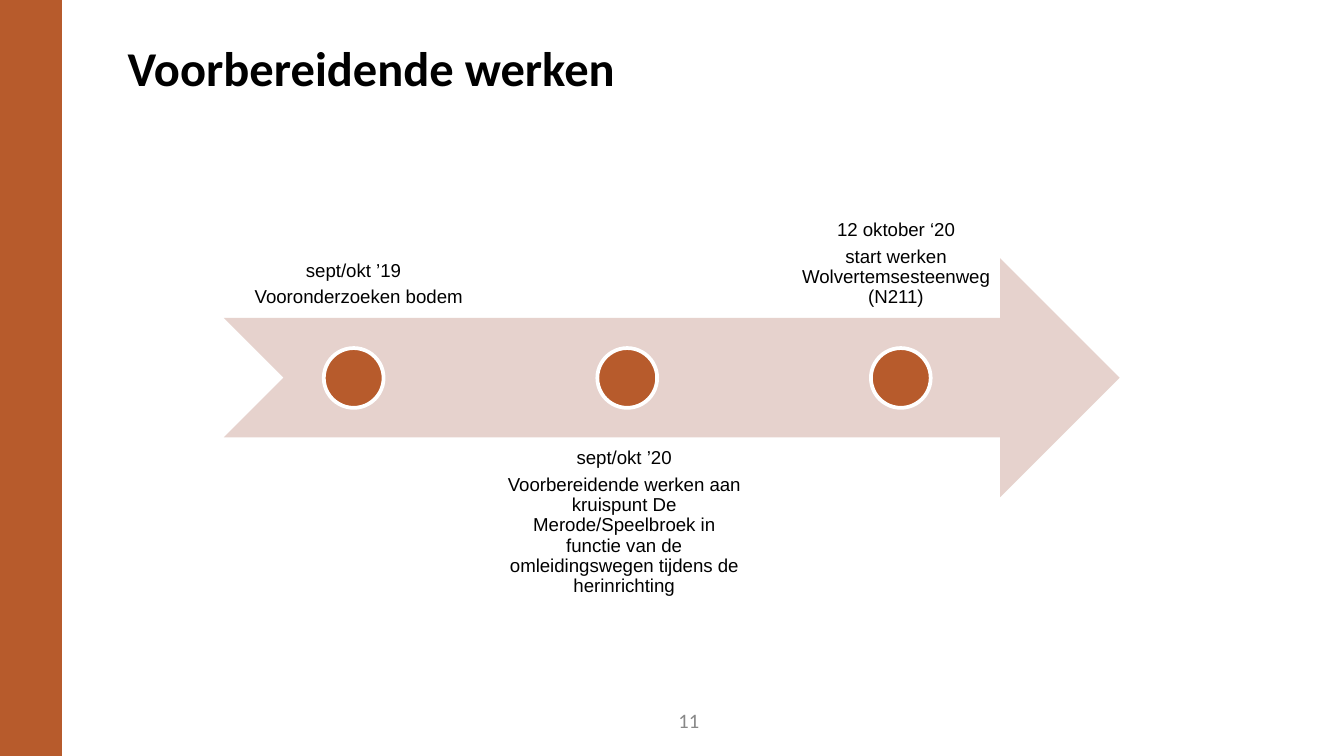
from pptx import Presentation
from pptx import util as u
from pptx.dml import color
from pptx.enum import shapes, text

Cm = u.Cm
COLORS = {
    "rust": "B75B2C",
    "blush": "E6D2CD",
    "black": "000000",
    "gray": "888888",
    "white": "FFFFFF",
}


def rgb(name):
    return color.RGBColor.from_string(COLORS[name])


def write(frame, lines, size, font="Arial", ink="black", bold=False,
          align=text.PP_ALIGN.CENTER, anchor=text.MSO_ANCHOR.TOP,
          inset=(0.25, 0.13), spacing=None, after=None, shifts=()):
    frame.word_wrap = True
    frame.auto_size = text.MSO_AUTO_SIZE.NONE
    frame.vertical_anchor = anchor
    frame.margin_left = frame.margin_right = Cm(inset[0])
    frame.margin_top = frame.margin_bottom = Cm(inset[1])
    frame.text = "\n".join(lines)
    for paragraph in frame.paragraphs:
        paragraph.alignment = align
        paragraph.line_spacing = spacing
        paragraph.space_after = after
        paragraph.font.size = u.Pt(size)
        paragraph.font.name = font
        paragraph.font.bold = bold
        paragraph.font.color.rgb = rgb(ink)
    for paragraph, (side, points) in zip(frame.paragraphs, shifts):
        paragraph._p.get_or_add_pPr().set(side, str(u.Pt(points)))


prs = Presentation()
prs.slide_width, prs.slide_height = Cm(25.4), Cm(14.29)
slide = prs.slides.add_slide(prs.slide_layouts[5])

sidebar = slide.shapes.add_shape(
    shapes.MSO_SHAPE.RECTANGLE, 0, 0, Cm(1.17), prs.slide_height)
sidebar.shadow.inherit = False
sidebar.fill.solid()
sidebar.fill.fore_color.rgb = rgb("rust")
sidebar.line.fill.background()

heading = slide.shapes.title
heading.left, heading.top = Cm(2.16), Cm(0.58)
heading.width, heading.height = Cm(21.97), Cm(2.39)
write(heading.text_frame, ["Voorbereidende werken"], 26, font="Calibri",
      bold=True, align=text.PP_ALIGN.LEFT)

page_number = slide.shapes.add_textbox(Cm(10.06), Cm(13.23), Cm(5.92), Cm(0.76))
write(page_number.text_frame, ["11"], 11, font="Calibri", ink="gray",
      anchor=text.MSO_ANCHOR.MIDDLE)

timeline = slide.shapes.add_shape(
    shapes.MSO_SHAPE.NOTCHED_RIGHT_ARROW, Cm(4.23), Cm(4.88), Cm(16.93), Cm(4.52))
timeline.shadow.inherit = False
timeline.fill.solid()
timeline.fill.fore_color.rgb = rgb("blush")
timeline.line.fill.background()

ABOVE = (1.5, text.MSO_ANCHOR.BOTTOM)
BELOW = (8.28, text.MSO_ANCHOR.TOP)
milestones = [
    (4.23, 4.9, ABOVE, ["sept/okt ’19", "Vooronderzoeken bodem"],
     [("marL", 0), ("marL", 5.5)]),
    (9.37, 4.95, BELOW,
     ["sept/okt ’20",
      "Voorbereidende werken aan kruispunt De Merode/Speelbroek in functie "
      "van de omleidingswegen tijdens de herinrichting"],
     [("marR", 2.8)]),
    (14.86, 4.34, ABOVE,
     ["12 oktober ‘20", "start werken Wolvertemsesteenweg (N211)"],
     [("marR", 5.5)]),
]
for step, (left, width, (top, anchor), lines, shifts) in enumerate(milestones):
    label = slide.shapes.add_textbox(Cm(left), Cm(top), Cm(width), Cm(4.52))
    write(label.text_frame, lines, 10, anchor=anchor, inset=(0.2, 0.2),
          spacing=0.9, after=u.Pt(3.5), shifts=shifts)

    marker = slide.shapes.add_shape(
        shapes.MSO_SHAPE.OVAL, Cm(6.12 + 5.17 * step), Cm(6.58), Cm(1.13), Cm(1.13))
    marker.shadow.inherit = False
    marker.fill.solid()
    marker.fill.fore_color.rgb = rgb("rust")
    marker.line.color.rgb = rgb("white")
    marker.line.width = u.Pt(2)

prs.save("out.pptx")
